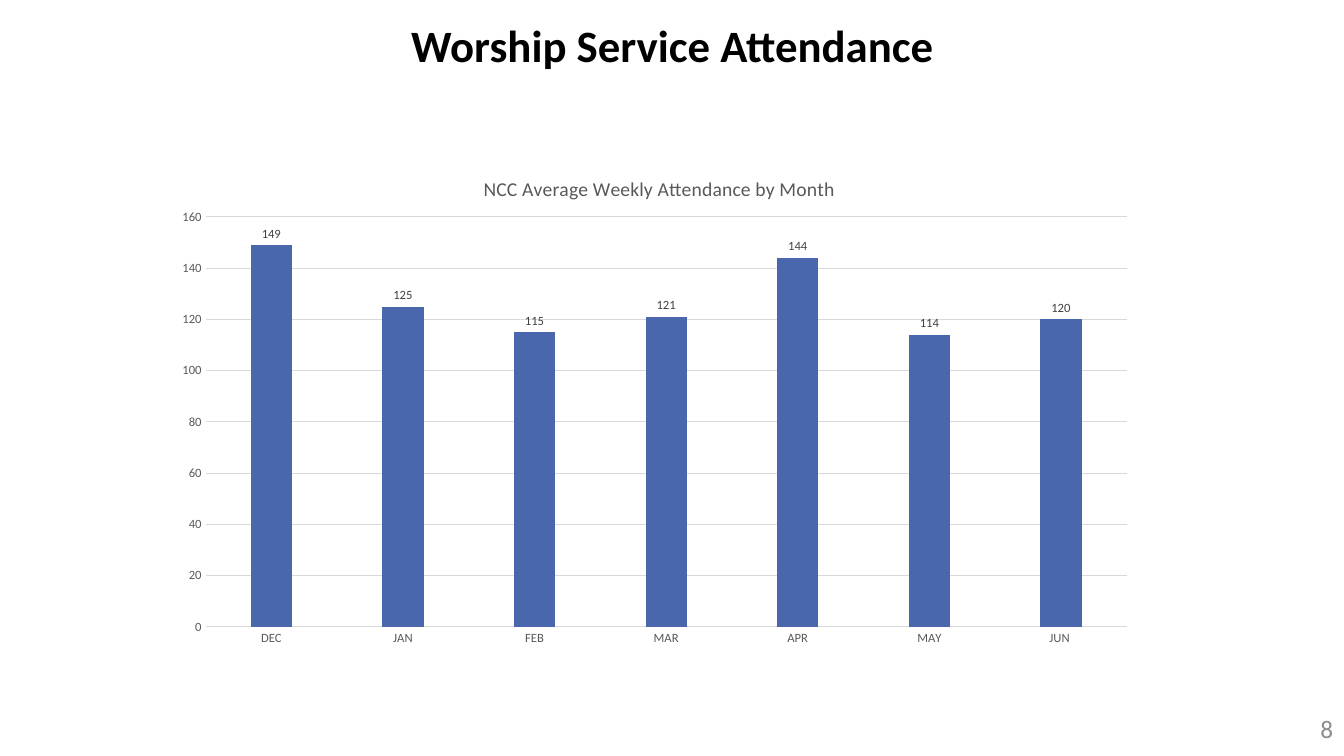
from dataclasses import dataclass

from pptx import Presentation
from pptx.chart.data import CategoryChartData
from pptx.dml.color import RGBColor
from pptx.enum.chart import XL_CHART_TYPE as ChartType, XL_LABEL_POSITION as LabelPosition
from pptx.enum.chart import XL_TICK_MARK as TickMark
from pptx.enum.text import MSO_ANCHOR as Anchor, PP_ALIGN as Align
from pptx.oxml import parse_xml
from pptx.oxml.ns import nsdecls, qn
from pptx.util import Inches, Pt


@dataclass(frozen=True)
class Theme:
    """Colours, typeface and type sizes of the slide."""
    face: str = "Calibri"
    heading: str = "000000"
    bar: str = "4A66AC"
    grid: str = "D9D9D9"
    axis: str = "595959"
    label: str = "404040"
    number: str = "8C8C8C"
    heading_size: int = 32
    number_size: int = 18
    caption_size: int = 14
    chart_size: int = 10
    axis_size: int = 9


THEME = Theme()
ATTENDANCE = {"DEC": 149, "JAN": 125, "FEB": 115, "MAR": 121,
              "APR": 144, "MAY": 114, "JUN ": 120}


def set_all(target, **values):
    """Set each named attribute on the target."""
    for name, value in values.items():
        setattr(target, name, value)


def style_font(font, size, color, bold=False):
    """Give a font the theme typeface, a size and a colour."""
    set_all(font, name=THEME.face, size=Pt(size), bold=bold)
    font.color.rgb = RGBColor.from_string(color)


def style_line(line):
    """Draw a line as a thin grid rule."""
    line.color.rgb = RGBColor.from_string(THEME.grid)
    line.width = Pt(0.75)


def set_layout(parent, index, target=None, **fractions):
    """Place a chart part by fractions of the chart area."""
    for layout in parent.findall(qn("c:layout")):
        parent.remove(layout)
    inner = f'<c:layoutTarget val="{target}"/>' if target else ""
    modes = "".join(f'<c:{side}Mode val="edge"/>' for side in "xy")
    sizes = "".join(f'<c:{side} val="{value}"/>' for side, value in fractions.items())
    parent.insert(index, parse_xml(
        f'<c:layout {nsdecls("c")}><c:manualLayout>{inner}{modes}{sizes}'
        '</c:manualLayout></c:layout>'))


def write_line(frame, text, align, size, color, bold=False):
    """Write one formatted line in a text frame."""
    set_all(frame, word_wrap=True, vertical_anchor=Anchor.MIDDLE)
    line = frame.paragraphs[0]
    line.text = text
    line.alignment = align
    style_font(line.runs[0].font, size, color, bold)
    return line


def add_heading(slide, left, top, width, height):
    """Place the slide title in its box."""
    heading = slide.shapes.title
    set_all(heading, left=left, top=top, width=width, height=height)
    line = write_line(heading.text_frame, "Worship Service Attendance", Align.CENTER,
                      THEME.heading_size, THEME.heading, True)
    line.line_spacing = 0.9


def add_attendance_chart(slide, left, top, width, height):
    """Place the monthly attendance column chart in its box."""
    data = CategoryChartData(number_format="0")
    data.categories = list(ATTENDANCE)
    data.add_series("Series 1", list(ATTENDANCE.values()))
    chart = slide.shapes.add_chart(ChartType.COLUMN_CLUSTERED,
                                   left, top, width, height, data).chart
    style_font(chart.font, THEME.chart_size, THEME.heading)
    set_all(chart, has_legend=False, has_title=True)

    caption = chart.chart_title.text_frame.paragraphs[0]
    caption.text = "NCC Average Weekly Attendance by Month"
    style_font(caption.runs[0].font, THEME.caption_size, THEME.axis)
    set_layout(chart.element.find(f".//{qn('c:title')}"), 1, x=0.32, y=0.04)
    set_layout(chart.element.find(f".//{qn('c:plotArea')}"), 0, "inner",
               x=0.04, y=0.13, w=0.94, h=0.81)

    months, people = chart.category_axis, chart.value_axis
    for axis in (months, people):
        set_all(axis, major_tick_mark=TickMark.NONE, minor_tick_mark=TickMark.NONE)
        style_font(axis.tick_labels.font, THEME.axis_size, THEME.axis)
    style_line(months.format.line)
    people.format.line.fill.background()
    style_line(people.major_gridlines.format.line)
    set_all(people, minimum_scale=0, maximum_scale=160, major_unit=20)
    set_all(people.tick_labels, number_format="0", number_format_is_linked=False)

    columns = chart.plots[0]
    set_all(columns, gap_width=219, overlap=-27, vary_by_categories=False)
    weekly = columns.series[0]
    weekly.format.fill.solid()
    weekly.format.fill.fore_color.rgb = RGBColor.from_string(THEME.bar)
    counts = weekly.data_labels
    set_all(counts, show_value=True, position=LabelPosition.OUTSIDE_END,
            number_format="0", number_format_is_linked=False)
    style_font(counts.font, THEME.axis_size, THEME.label)


def add_page_number(slide, left, top, width, height):
    """Place the page number in its box."""
    page = slide.shapes.add_textbox(left, top, width, height)
    write_line(page.text_frame, "8", Align.RIGHT, THEME.number_size, THEME.number)


def main():
    """Build the attendance slide and save it."""
    deck = Presentation()
    set_all(deck, slide_width=Inches(13.33), slide_height=Inches(7.5))
    slide = deck.slides.add_slide(deck.slide_layouts[5])
    add_heading(slide, Inches(0.92), Inches(0.1), Inches(11.5), Inches(0.75))
    add_attendance_chart(slide, Inches(1.65), Inches(1.5), Inches(9.72), Inches(5.02))
    add_page_number(slide, Inches(10.32), Inches(7.03), Inches(3), Inches(0.4))
    deck.save("out.pptx")


if __name__ == "__main__":
    main()
